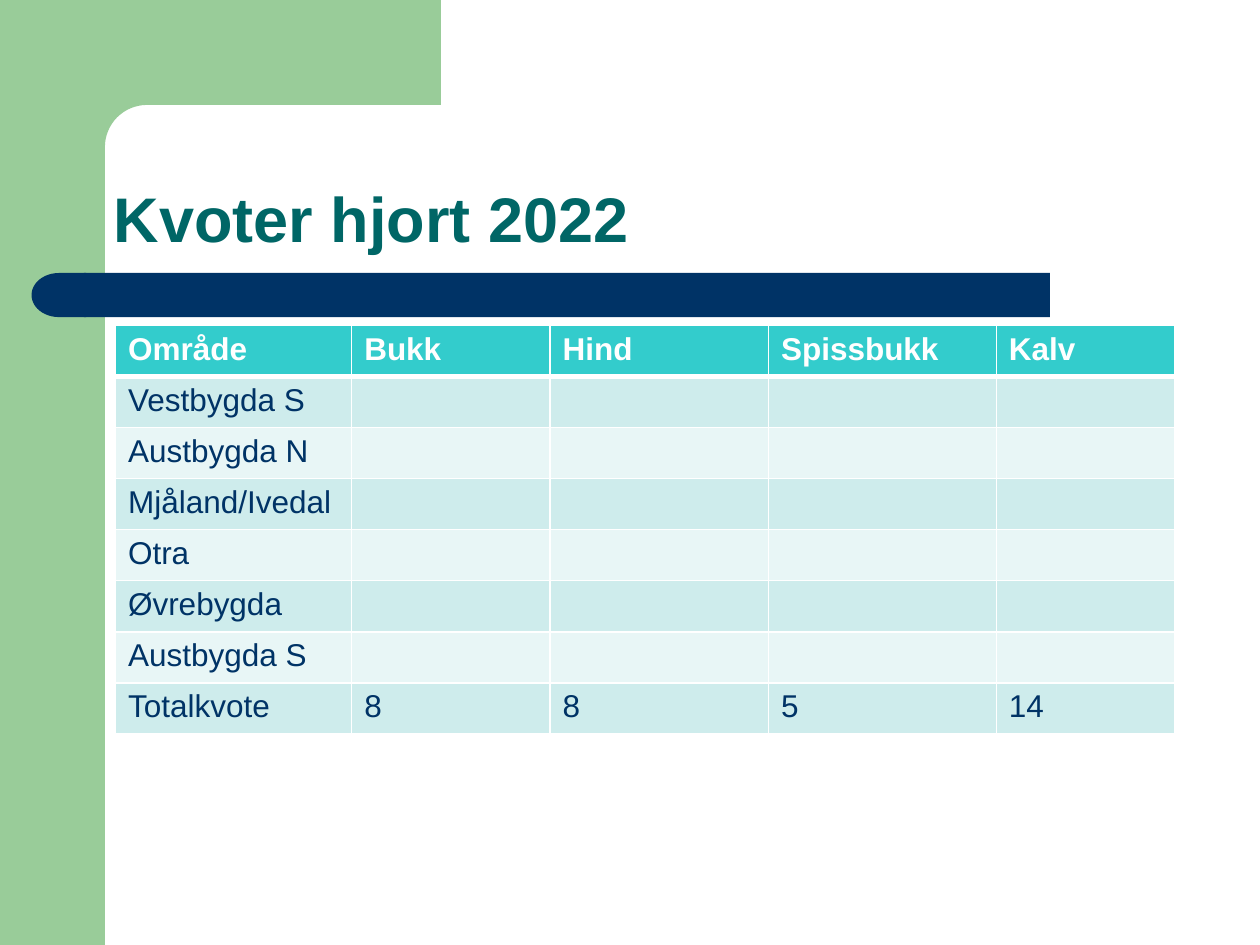
from math import cos, pi, sin

from lxml.etree import SubElement
from pptx import Presentation
from pptx.dml.color import RGBColor
from pptx.enum.shapes import MSO_SHAPE
from pptx.enum.text import MSO_ANCHOR, PP_ALIGN
from pptx.oxml.ns import qn
from pptx.util import Inches, Pt

COLORS = {
    "green": "99CC99",
    "navy": "003366",
    "teal": "006666",
    "header": "33CCCC",
    "odd": "CEECEC",
    "even": "E8F6F6",
    "white": "FFFFFF",
}
COLUMNS = ["Område", "Bukk", "Hind", "Spissbukk", "Kalv"]
AREAS = ["Vestbygda S", "Austbygda N", "Mjåland/Ivedal", "Otra", "Øvrebygda", "Austbygda S"]
TOTALS = ["Totalkvote", "8", "8", "5", "14"]


class SlideBuilder:
    """Draws styled elements on a slide laid out as 12 columns by 9 rows."""

    font = "Arial"

    def __init__(self, prs):
        self.unit = prs.slide_width / 12
        self.slide = prs.slides.add_slide(prs.slide_layouts[6])

    def size(self, *values):
        return [round(v * self.unit) for v in values]

    def color(self, name):
        return RGBColor.from_string(COLORS[name])

    def paint(self, sp, color):
        sp.shadow.inherit = False
        sp.fill.solid()
        sp.fill.fore_color.rgb = self.color(color)
        sp.line.fill.background()

    def shape(self, kind, box, color):
        sp = self.slide.shapes.add_shape(kind, *self.size(*box))
        self.paint(sp, color)
        return sp

    def outline(self, points, color):
        points = [self.size(*point) for point in points]
        builder = self.slide.shapes.build_freeform(*points[0])
        builder.add_line_segments(points[1:], close=True)
        self.paint(builder.convert_to_shape(), color)

    def set_text(self, tf, text, size, color, bold):
        tf.text = text
        p = tf.paragraphs[0]
        p.alignment = PP_ALIGN.LEFT
        for r in p.runs:
            r.font.name = self.font
            r.font.size = Pt(size)
            r.font.bold = bold
            r.font.color.rgb = self.color(color)
        return p

    def title(self, text, box):
        tf = self.slide.shapes.add_textbox(*self.size(*box)).text_frame
        tf.word_wrap = True
        tf.vertical_anchor = MSO_ANCHOR.BOTTOM
        tf.margin_left = Inches(0.07)
        tf.margin_bottom = Inches(0.05)
        self.set_text(tf, text, 36, "teal", True).line_spacing = 0.9

    def border(self, cell, sides):
        tc_pr = cell._tc.get_or_add_tcPr()
        for i, (side, width) in enumerate(sides.items()):
            ln = SubElement(tc_pr, qn(f"a:ln{side}"), w=str(Pt(width)))
            tc_pr.insert(i, ln)
            fill = SubElement(ln, qn("a:solidFill"))
            SubElement(fill, qn("a:srgbClr"), val=COLORS["white"])

    def table(self, rows, box, widths):
        frame = self.slide.shapes.add_table(len(rows), len(widths), *self.size(*box))
        table = frame.table
        for column, width in zip(table.columns, self.size(*widths)):
            column.width = width
        for i, row in enumerate(rows):
            header = i == 0
            fill = "header" if header else "odd" if i % 2 else "even"
            sides = {"L": 1, "R": 1, "T": 3 if i == 1 else 1, "B": 3 if header else 1}
            for j, text in enumerate(row):
                cell = table.cell(i, j)
                cell.fill.solid()
                cell.fill.fore_color.rgb = self.color(fill)
                self.border(cell, sides)
                if text:
                    self.set_text(cell.text_frame, text, 18, "white" if header else "navy", header)


def main():
    prs = Presentation()
    prs.slide_width, prs.slide_height = Inches(10), Inches(7.5)
    s = SlideBuilder(prs)

    s.shape(MSO_SHAPE.RECTANGLE, (0, 0, 1, 9), "green")
    radius, steps = 0.4, 16
    angles = [pi / 2 * i / steps for i in range(steps + 1)]
    corner = [(1 + radius * (1 - sin(a)), 1 + radius * (1 - cos(a))) for a in angles]
    s.outline([(4.2, 0), (4.2, 1), *corner, (1, 1.54), (0.6, 1.54), (0.6, 0)], "green")

    bar = s.shape(MSO_SHAPE.ROUNDED_RECTANGLE, (0.8, 2.6, 9.2, 0.42), "navy")
    bar.adjustments[0] = 0
    cap = s.shape(MSO_SHAPE.FLOWCHART_DELAY, (0.3, 2.6, 0.52, 0.42), "navy")
    cap.rotation = 180

    s.title("Kvoter hjort 2022", (1, 1, 10.4, 1.5))
    blanks = [""] * (len(COLUMNS) - 1)
    rows = [COLUMNS, *([area, *blanks] for area in AREAS), TOTALS]
    s.table(rows, (1.1, 3.1, 10.09, 3.89), [2.25, 1.89, 2.08, 2.17, 1.7])

    prs.save("out.pptx")


if __name__ == "__main__":
    main()
